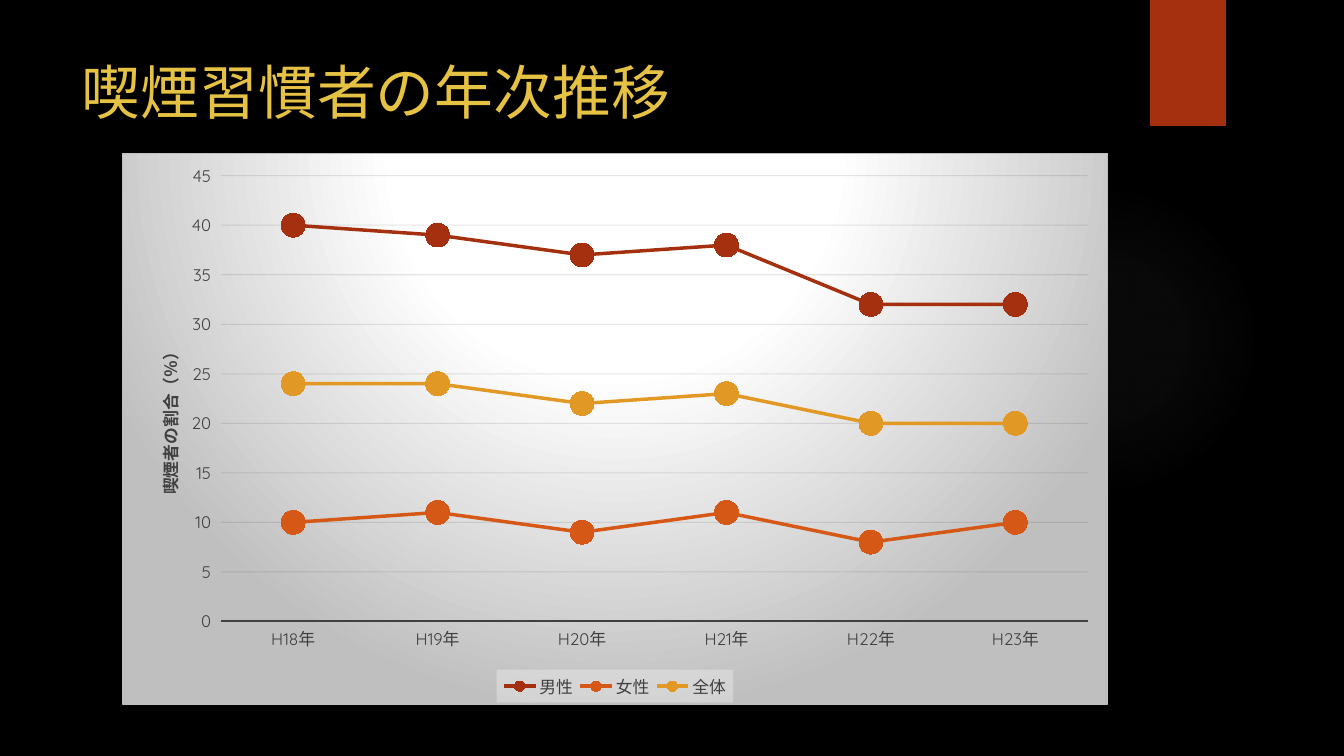
"""Build the slide on yearly smoking rates."""
from pptx import Presentation, util as u
from pptx.chart.data import CategoryChartData
from pptx.dml.color import RGBColor
from pptx.enum import chart as ch, shapes, text
from pptx.oxml import parse_xml
from pptx.oxml.ns import nsdecls

WIDE, HIGH = u.Inches(13.33), u.Inches(7.5)
FONT, RED, DARK = "Quicksand", "A5300F", "404040"
YEARS = [f"H{n}年" for n in range(18, 24)]
RATES = [
    ("男性", RED, (40, 39, 37, 38, 32, 32)),
    ("女性", "D55816", (10, 11, 9, 11, 8, 10)),
    ("全体", "E19825", (24, 24, 22, 23, 20, 20)),
]


def rgb(code):
    """Turn a hex string into a colour."""
    return RGBColor.from_string(code)


def box(left, top, width, height):
    """Turn percentages of the slide into lengths."""
    return [round(part * full / 100) for part, full in
            zip((left, top, width, height), (WIDE, HIGH) * 2)]


def put(item, **vals):
    """Set attributes from named values."""
    for name, val in vals.items():
        setattr(item, name, val)


def style(font, size, code, bold=False):
    """Format a font."""
    put(font, name=FONT, size=u.Pt(size), bold=bold)
    font.color.rgb = rgb(code)


def stroke(line, code, width):
    """Format a line."""
    line.color.rgb = rgb(code)
    line.width = u.Pt(width)


def tint(code, alpha=100):
    """Give the XML of a colour with its opacity."""
    return f'<a:srgbClr val="{code}"><a:alpha val="{alpha * 1000}"/></a:srgbClr>'


def glow(stops, top, low):
    """Give the XML of a round gradient."""
    marks = "".join(f'<a:gs pos="{pos * 1000}">{tint(code, alpha)}</a:gs>'
                    for pos, code, alpha in stops)
    return (f'<a:gradFill {nsdecls("a")} rotWithShape="1"><a:gsLst>{marks}</a:gsLst>'
            f'<a:path path="circle"><a:fillToRect l="50000" t="{top * 1000}" '
            f'r="50000" b="{low * 1000}"/></a:path></a:gradFill>')


def paint(spot, inner):
    """Put shape properties before a chart element."""
    spot.addprevious(parse_xml(f'<c:spPr {nsdecls("c", "a")}>{inner}</c:spPr>'))


def lay(spot, **shares):
    """Put a fixed layout before a chart element."""
    for old in spot.getparent().xpath("c:layout"):
        old.getparent().remove(old)
    inner = '<c:layoutTarget val="inner"/>' if "lineChart" in spot.tag else ""
    inner += '<c:xMode val="edge"/><c:yMode val="edge"/>'
    inner += "".join(f'<c:{key} val="{val}"/>' for key, val in shares.items())
    spot.addprevious(parse_xml(
        f'<c:layout {nsdecls("c")}><c:manualLayout>{inner}</c:manualLayout></c:layout>'))


def shape(slide, kind, place):
    """Add a shape without line or shadow."""
    item = slide.shapes.add_shape(kind, *box(*place))
    item.shadow.inherit = False
    item.line.fill.background()
    return item


def decor(slide):
    """Draw the faint disc and the red tab."""
    disc = shape(slide, shapes.MSO_SHAPE.OVAL, (70.58, 24.4, 23.1, 41.07))
    fade = glow([(0, "848484", 7), (36, "848484", 6), (69, "848484", 0)], 50, 50)
    disc.element.spPr.xpath("a:prstGeom")[0].addnext(parse_xml(fade))
    tab = shape(slide, shapes.MSO_SHAPE.RECTANGLE, (85.58, 0, 5.63, 16.67))
    tab.fill.solid()
    tab.fill.fore_color.rgb = rgb(RED)
    tab.element.spPr.xpath("a:effectLst")[0].append(parse_xml(
        f'<a:outerShdw {nsdecls("a")} blurRad="38100" dist="25400" dir="5400000" '
        f'rotWithShape="0">{tint("000000", 45)}</a:outerShdw>'))


def head(slide, words):
    """Fill the title placeholder."""
    title = slide.shapes.title
    put(title, **dict(zip(("left", "top", "width", "height"),
                          box(5.33, 6.67, 77.18, 20.4))))
    frame = title.text_frame
    put(frame, text=words, word_wrap=True, vertical_anchor=text.MSO_ANCHOR.TOP)
    para = frame.paragraphs[0]
    para.alignment = text.PP_ALIGN.LEFT
    style(para.runs[0].font, 42, "E5C243")


def plot(slide):
    """Add the line chart with its series."""
    data = CategoryChartData()
    data.categories = YEARS
    for name, _, vals in RATES:
        data.add_series(name, vals)
    chart = slide.shapes.add_chart(ch.XL_CHART_TYPE.LINE_MARKERS,
                                   *box(9.08, 20.27, 73.35, 72.93), data).chart
    put(chart, has_title=False, has_legend=True)
    style(chart.font, 10, "FFFFFF")
    chart.plots[0].vary_by_categories = False
    for line, (_, code, _) in zip(chart.plots[0].series, RATES):
        line.smooth = False
        stroke(line.format.line, code, 2.5)
        put(line.marker, style=ch.XL_MARKER_STYLE.CIRCLE, size=17)
        line.marker.format.fill.solid()
        line.marker.format.fill.fore_color.rgb = rgb(code)
        line.marker.format.line.fill.background()
    return chart


def axes(chart):
    """Format both axes and the legend."""
    cat, val = chart.category_axis, chart.value_axis
    cat.major_tick_mark = ch.XL_TICK_MARK.NONE
    stroke(cat.format.line, DARK, 1.5)
    put(val, minimum_scale=0, maximum_scale=45, major_unit=5,
        has_major_gridlines=True, major_tick_mark=ch.XL_TICK_MARK.OUTSIDE)
    val.format.line.fill.background()
    stroke(val.major_gridlines.format.line, "0D0D0D", 0.75)
    frame = val.axis_title.text_frame
    frame.text = "喫煙者の割合（％）"
    style(frame.paragraphs[0].runs[0].font, 12, DARK, True)
    put(chart.legend, position=ch.XL_LEGEND_POSITION.BOTTOM, include_in_layout=False)
    for part in (cat.tick_labels, val.tick_labels, chart.legend):
        style(part.font, 12, DARK)


def finish(chart):
    """Set the chart's backdrop, see-through parts and layout."""
    def find(route):
        return chart.element.xpath(route)[0]

    fade = glow([(0, "FFFFFF", 100), (39, "FFFFFF", 100), (100, "BFBFBF", 100)],
                -80, 180)
    paint(find("./c:txPr"),
          f'{fade}<a:ln w="9525"><a:solidFill>{tint("BFBFBF")}</a:solidFill></a:ln>')
    paint(find(".//c:legend/c:txPr"),
          f'<a:solidFill>{tint("F2F2F2", 39)}</a:solidFill>')
    find(".//c:majorGridlines//a:srgbClr").append(
        parse_xml(f'<a:alpha {nsdecls("a")} val="10000"/>'))
    lay(find(".//c:lineChart"), x=0.1, y=0.04, w=0.88, h=0.81)
    lay(find(".//c:valAx/c:title/c:overlay"), x=0.03, y=0.34)
    lay(find(".//c:legend/c:overlay"), x=0.38, y=0.94, w=0.24, h=0.06)


def main():
    """Build and save the slide."""
    deck = Presentation()
    put(deck, slide_width=WIDE, slide_height=HIGH)
    slide = deck.slides.add_slide(deck.slide_layouts[5])
    slide.background.fill.solid()
    slide.background.fill.fore_color.rgb = rgb("000000")
    decor(slide)
    head(slide, "喫煙習慣者の年次推移")
    chart = plot(slide)
    axes(chart)
    finish(chart)
    deck.save("out.pptx")


if __name__ == "__main__":
    main()
